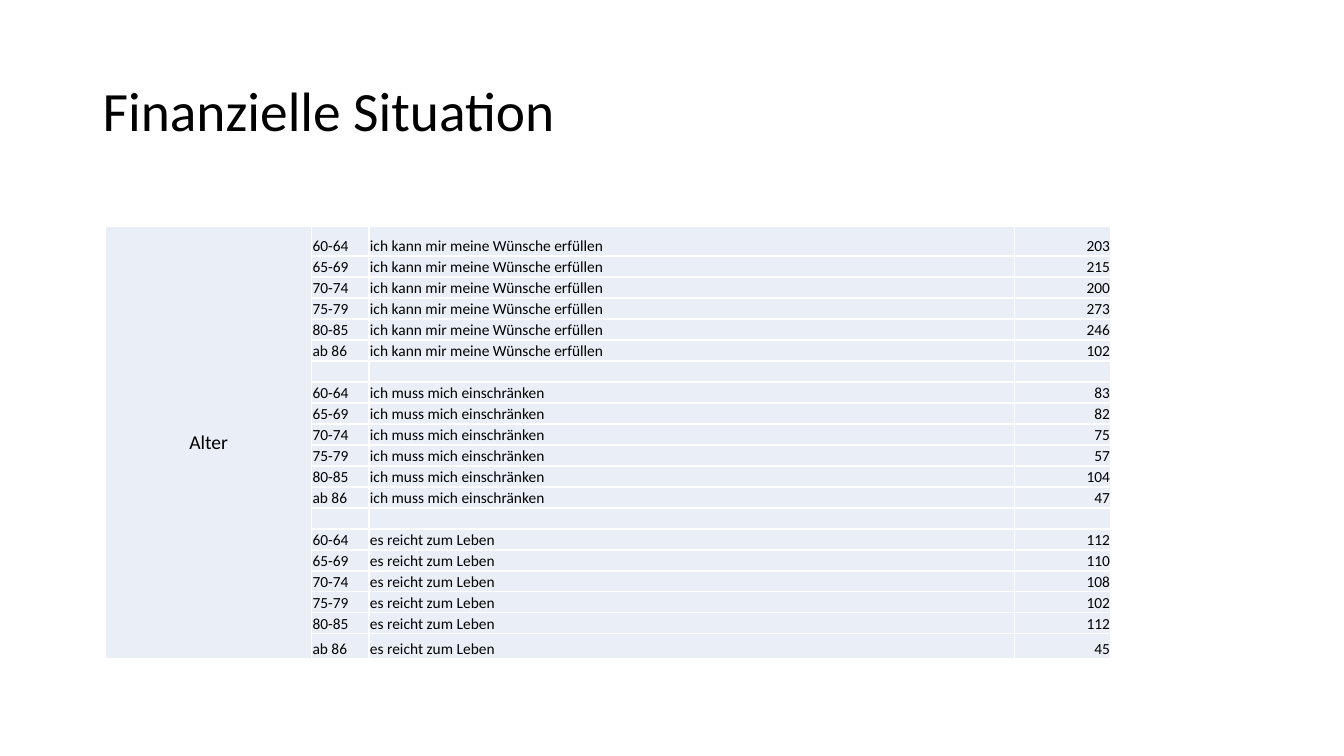
from lxml import etree
from pptx import Presentation
from pptx.dml.color import RGBColor
from pptx.enum.text import MSO_ANCHOR, PP_ALIGN
from pptx.oxml.ns import qn
from pptx.util import Inches, Pt

LEFT, CENTER, RIGHT = PP_ALIGN.LEFT, PP_ALIGN.CENTER, PP_ALIGN.RIGHT
MIDDLE, BOTTOM = MSO_ANCHOR.MIDDLE, MSO_ANCHOR.BOTTOM

FONT = "Calibri"
BLACK, WHITE, PALE_BLUE = "000000", "FFFFFF", "EAEFF7"

AGE_GROUPS = ["60-64", "65-69", "70-74", "75-79", "80-85", "ab 86"]
ANSWERS = {
    "ich kann mir meine Wünsche erfüllen": [203, 215, 200, 273, 246, 102],
    "ich muss mich einschränken": [83, 82, 75, 57, 104, 47],
    "es reicht zum Leben": [112, 110, 108, 102, 112, 45],
}
COLUMN_WIDTHS = [2.04, 0.57, 6.4, 0.96]
FIRST_ROW, MIDDLE_ROWS, LAST_ROW = 0.29, 3.75, 0.24


def color(hex_code):
    """Turn a hex string into a colour."""
    return RGBColor.from_string(hex_code)


def write(paragraph, text, size, align=LEFT):
    """Add one run of text to a paragraph."""
    paragraph.alignment = align
    run = paragraph.add_run()
    run.text = text
    run.font.name = FONT
    run.font.size = Pt(size)
    run.font.color.rgb = color(BLACK)


def add_title(slide, text):
    """Add the slide title."""
    title = slide.shapes.add_textbox(Inches(0.92), Inches(0.4), Inches(11.5), Inches(1.45))
    frame = title.text_frame
    frame.word_wrap = True
    frame.vertical_anchor = MIDDLE
    frame.paragraphs[0].line_spacing = 0.9
    write(frame.paragraphs[0], text, 39.6)


def add_borders(cell):
    """Draw a thin white line on each side of a cell."""
    properties = cell._tc.get_or_add_tcPr()
    for side in ("a:lnL", "a:lnR", "a:lnT", "a:lnB"):
        line = etree.SubElement(properties, qn(side), w=str(Pt(1)))
        fill = etree.SubElement(line, qn("a:solidFill"))
        etree.SubElement(fill, qn("a:srgbClr"), val=WHITE)


def fill_cell(cell, text, size=11, align=LEFT, anchor=BOTTOM):
    """Style a table cell and write its text."""
    add_borders(cell)
    cell.fill.solid()
    cell.fill.fore_color.rgb = color(PALE_BLUE)
    cell.margin_left = cell.margin_right = cell.margin_top = Inches(0.01)
    cell.margin_bottom = 0
    cell.vertical_anchor = anchor
    paragraph = cell.text_frame.paragraphs[0]
    if text:
        write(paragraph, text, size, align)
    else:
        etree.SubElement(paragraph._p, qn("a:endParaRPr"), sz=str(size * 100))


def survey_rows():
    """List the table rows, with an empty row between answers."""
    rows = []
    for answer, counts in ANSWERS.items():
        if rows:
            rows.append(("", "", ""))
        rows += [(age, answer, str(count)) for age, count in zip(AGE_GROUPS, counts)]
    return rows


def add_survey_table(slide):
    """Add the table of answers by age group."""
    rows = survey_rows()
    inner = len(rows) - 2
    heights = [FIRST_ROW] + [MIDDLE_ROWS / inner] * inner + [LAST_ROW]
    table = slide.shapes.add_table(
        len(rows), len(COLUMN_WIDTHS), Inches(1.05), Inches(2.25),
        Inches(sum(COLUMN_WIDTHS)), Inches(sum(heights)),
    ).table
    table.first_row = table.horz_banding = False
    for column, width in zip(table.columns, COLUMN_WIDTHS):
        column.width = Inches(width)
    for index, (row, height) in enumerate(zip(rows, heights)):
        table.rows[index].height = Inches(height)
        age, answer, count = row
        if index == 0:
            fill_cell(table.cell(0, 0), "Alter", 14, CENTER, MIDDLE)
        else:
            fill_cell(table.cell(index, 0), "")
        fill_cell(table.cell(index, 1), age)
        fill_cell(table.cell(index, 2), answer)
        fill_cell(table.cell(index, 3), count, align=RIGHT)
    table.cell(0, 0).merge(table.cell(len(rows) - 1, 0))


def main():
    """Build the slide and save it."""
    deck = Presentation()
    deck.slide_width, deck.slide_height = Inches(13.33), Inches(7.5)
    slide = deck.slides.add_slide(deck.slide_layouts[6])
    add_title(slide, "Finanzielle Situation")
    add_survey_table(slide)
    deck.save("out.pptx")


if __name__ == "__main__":
    main()
